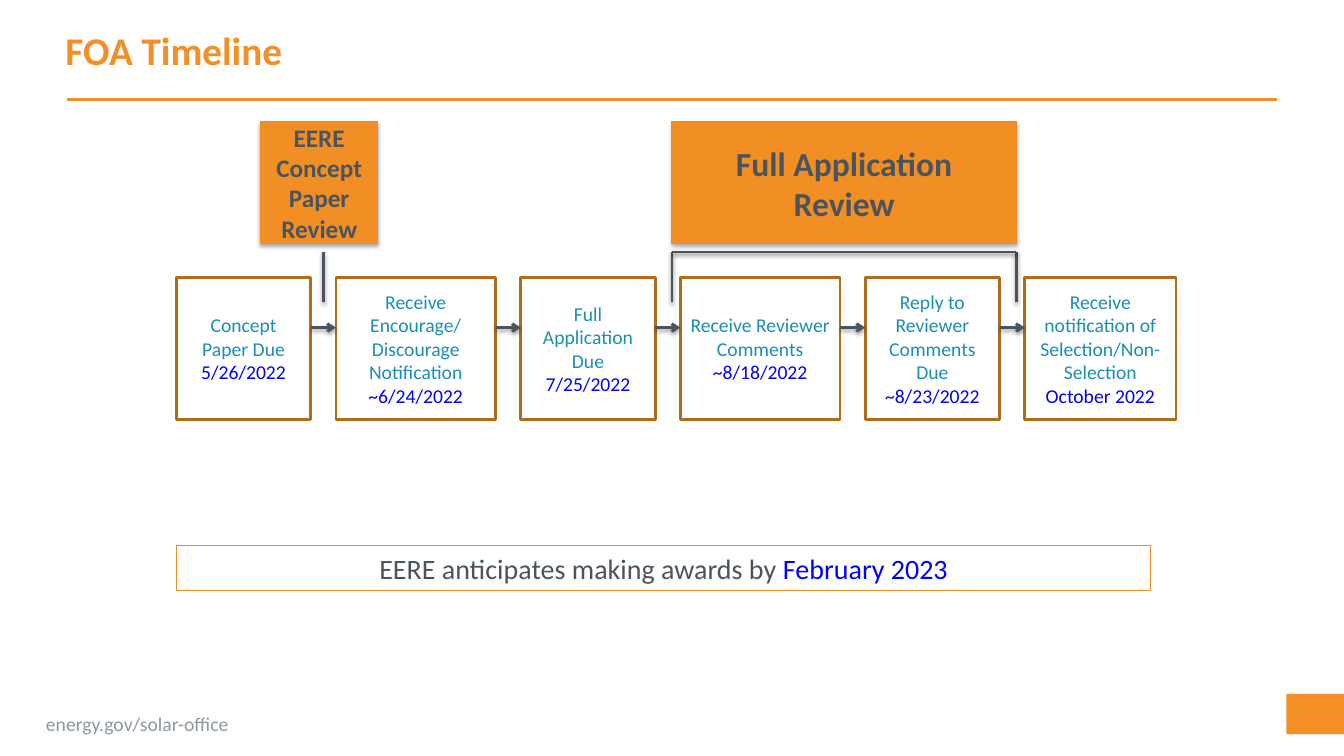
"""Build the FOA timeline slide on a grid of 160 columns by 90 rows."""
from lxml import etree
from pptx import Presentation
from pptx import util as u
from pptx.dml.color import RGBColor
from pptx.enum import shapes, text
from pptx.oxml.ns import qn

COLORS = {"orange": "F38F26", "header": "F18F25", "header_edge": "F18C1F", "brown": "B26A1B",
          "white": "FFFFFF", "slate": "4B545D", "teal": "1B8EB4", "date": "0000FF",
          "gray": "8D98A3", "shadow": "000000"}
LEFT, CENTER = text.PP_ALIGN.LEFT, text.PP_ALIGN.CENTER
TOP, MIDDLE = text.MSO_ANCHOR.TOP, text.MSO_ANCHOR.MIDDLE

presentation = Presentation()
presentation.slide_width, presentation.slide_height = u.Inches(13.333), u.Inches(7.5)
slide = presentation.slides.add_slide(presentation.slide_layouts[6])
column, row = presentation.slide_width / 160, presentation.slide_height / 90


def add_box(place, fill=None, edge=None, width=0.75, shadow=None, paragraphs=(),
            size=14, bold=False, align=CENTER, anchor=MIDDLE, wrap=True):
    """Draw a rectangle with paragraphs made of (words, color) runs."""
    left, top, wide, high = place
    shape = slide.shapes.add_shape(shapes.MSO_SHAPE.RECTANGLE, int(left * column), int(top * row),
                                   int(wide * column), int(high * row))
    shape.shadow.inherit = False
    for paint, color in ((shape.fill, fill), (shape.line.fill, edge)):
        if color:
            paint.solid()
            paint.fore_color.rgb = RGBColor.from_string(COLORS[color])
        else:
            paint.background()
    if edge:
        shape.line.width = u.Pt(width)
    if shadow:
        add_shadow(shape, *shadow)
    frame = shape.text_frame
    frame.word_wrap, frame.vertical_anchor = wrap, anchor
    for index, runs in enumerate(paragraphs):
        paragraph = frame.add_paragraph() if index else frame.paragraphs[0]
        paragraph.alignment = align
        for words, color in runs:
            run = paragraph.add_run()
            run.text = words
            for name, value in {"name": "Calibri", "size": u.Pt(size), "bold": bold}.items():
                setattr(run.font, name, value)
            run.font.color.rgb = RGBColor.from_string(COLORS[color])


def add_shadow(shape, distance, opacity):
    """Give a shape a soft shadow that falls straight down."""
    properties = shape._element.spPr
    effects = properties.find(qn("a:effectLst"))
    if effects is None:
        effects = etree.SubElement(properties, qn("a:effectLst"))
    if opacity:
        outer = etree.SubElement(effects, qn("a:outerShdw"), blurRad=str(u.Pt(3.1)),
                                 dist=str(u.Pt(distance)), dir="5400000", rotWithShape="0")
        color = etree.SubElement(outer, qn("a:srgbClr"), val=COLORS["shadow"])
        etree.SubElement(color, qn("a:alpha"), val=str(opacity * 1000))


add_box((153.15, 82.6, 6.85, 4.8), fill="orange")
add_box((4.3, 84.2, 24.5, 4.1), paragraphs=[[("energy.gov/solar-office", "gray")]],
        align=LEFT, anchor=TOP, wrap=False)
add_box((6.6, 2.5, 102, 9), paragraphs=[[("FOA Timeline", "orange")]],
        size=28, bold=True, align=LEFT, anchor=TOP)

steps = [
    (16, ["Concept Paper Due"], "5/26/2022"),
    (19, ["Receive Encourage/ Discourage Notification"], "~6/24/2022"),
    (16, ["Full Application Due"], "7/25/2022"),
    (19, ["Receive Reviewer Comments"], "~8/18/2022"),
    (16, ["Reply to Reviewer Comments", "Due"], "~8/23/2022"),
    (18, ["Receive notification of Selection/Non-Selection"], "October 2022"),
]
gap, left = 3, 21
lines = [(8, 11.8, 152, 11.8, "orange", False)]
for step_width, labels, date in steps:
    if left > 21:
        lines.append((left - gap, 39, left, 39, "slate", True))
    add_box((left, 33, step_width, 17), fill="white", edge="brown", width=2,
            paragraphs=[[(label, "teal")] for label in labels] + [[(date, "date")]])
    left += step_width + gap

headers = [(31, 14, 18, ["EERE", "Concept Paper Review"]), (80, 41, 24, ["Full Application Review"])]
for header_left, header_width, size, labels in headers:
    add_box((header_left, 14.5, header_width, 14.5), fill="header", edge="header_edge",
            shadow=(1.8, 35), paragraphs=[[(label, "slate")] for label in labels],
            size=size, bold=True)

lines += [(x, 30, x, 36, "slate", False) for x in (38.5, 80, 121)]
lines.append((80, 30, 121, 30, "slate", False))
for x1, y1, x2, y2, color, arrow in lines:
    connector = slide.shapes.add_connector(shapes.MSO_CONNECTOR.STRAIGHT, int(x1 * column),
                                           int(y1 * row), int(x2 * column), int(y2 * row))
    connector.line.color.rgb = RGBColor.from_string(COLORS[color])
    connector.line.width = u.Pt(2)
    if arrow:
        etree.SubElement(connector.line._get_or_add_ln(), qn("a:tailEnd"), type="arrow")
    add_shadow(connector, 1.6, 38 if color == "slate" else 0)

add_box((21, 65, 116, 5.3), edge="header", size=20,
        paragraphs=[[("EERE anticipates making awards by ", "slate"), ("February 2023", "date")]])

presentation.save("out.pptx")
